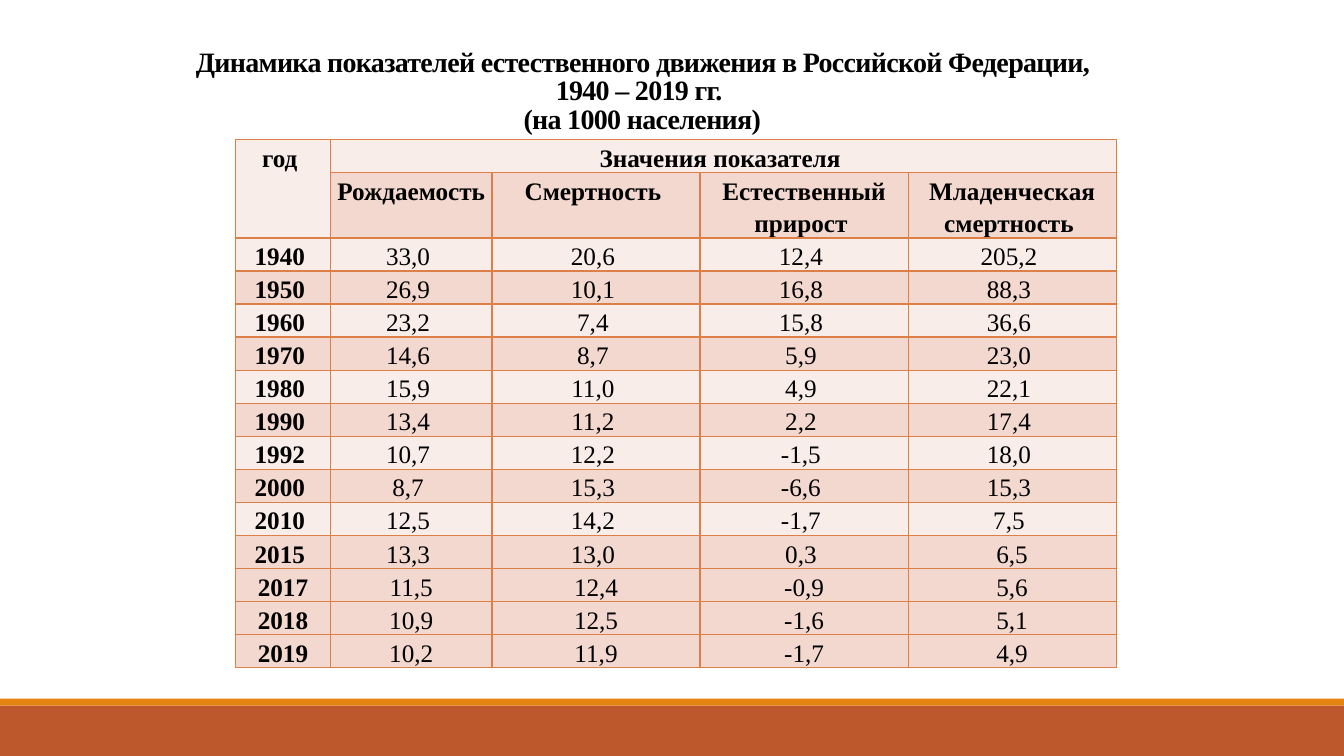
from lxml.etree import SubElement
from pptx import Presentation
from pptx.dml.color import RGBColor
from pptx.enum.shapes import MSO_SHAPE as Shape
from pptx.enum.text import MSO_ANCHOR as Anchor, MSO_AUTO_SIZE as AutoSize, PP_ALIGN as Align
from pptx.oxml.ns import qn
from pptx.util import Pt

COLORS = {
    "text": "000000",
    "footer": "BD582C",
    "stripe": "E48312",
    "border": "DD8047",
    "light": "F9EDE9",
    "dark": "F2D8CF",
}
TITLE = (
    "Динамика показателей естественного движения в Российской Федерации, "
    "1940 – 2019 гг. \v(на 1000 населения)"
)
ROWS = [
    "год |Значения показателя |||",
    "|Рождаемость |Смертность |Естественный прирост |Младенческая смертность ",
    "1940 |33,0 |20,6 |12,4 |205,2 ",
    "1950 |26,9 |10,1 |16,8 |88,3 ",
    "1960 |23,2 |7,4 |15,8 |36,6 ",
    "1970 |14,6 |8,7 |5,9 |23,0 ",
    "1980 |15,9 |11,0 |4,9 |22,1 ",
    "1990 |13,4 |11,2 |2,2 |17,4 ",
    "1992 |10,7 |12,2 |-1,5 |18,0 ",
    "2000 |8,7 |15,3 |-6,6 |15,3 ",
    "2010 |12,5 |14,2 |-1,7 |7,5 ",
    "2015 |13,3 |13,0 |0,3 |6,5",
    "2017|11,5|12,4|-0,9|5,6",
    "2018|10,9|12,5|-1,6|5,1",
    "2019|10,2|11,9|-1,7|4,9",
]
HEADER_ROWS = 2
RECENT_ROW = 12
COLUMN_WIDTHS = [67.8, 115.5, 148.6, 148.6, 148.6]
ROW_HEIGHTS = [16.5, 29] + [21] * (len(ROWS) - HEADER_ROWS)


class SlideBuilder:
    font = "Times New Roman"

    def __init__(self, page):
        self.page = page

    def color(self, name):
        return RGBColor.from_string(COLORS[name])

    def format_para(self, para, size, bold, spacing):
        para.alignment = Align.CENTER
        para.line_spacing = spacing
        for span in para.runs:
            span.font.name = self.font
            span.font.size = Pt(size)
            span.font.bold = bold
            span.font.color.rgb = self.color("text")

    def bar(self, top, height, fill):
        box = self.page.shapes.add_shape(Shape.RECTANGLE, 0, Pt(top), Pt(960), Pt(height))
        box.shadow.inherit = False
        box.fill.solid()
        box.fill.fore_color.rgb = self.color(fill)
        box.line.fill.background()

    def title(self, text, left, top, width, height):
        box = self.page.shapes.title
        box.left, box.top, box.width, box.height = Pt(left), Pt(top), Pt(width), Pt(height)
        frame = box.text_frame
        frame.word_wrap = True
        frame.auto_size = AutoSize.NONE
        frame.vertical_anchor = Anchor.BOTTOM
        para = frame.paragraphs[0]
        para.text = text
        self.format_para(para, 20, True, 0.85)
        for span in para.runs:
            span.font._element.set("spc", "-50")

    def border(self, cell):
        properties = cell._tc.get_or_add_tcPr()
        for side in ("a:lnL", "a:lnR", "a:lnT", "a:lnB"):
            line = SubElement(properties, qn(side), w=str(Pt(1)))
            fill = SubElement(line, qn("a:solidFill"))
            SubElement(fill, qn("a:srgbClr"), val=COLORS["border"])

    def cell(self, cell, text, bold, fill):
        self.border(cell)
        cell.fill.solid()
        cell.fill.fore_color.rgb = self.color(fill)
        cell.margin_left = cell.margin_right = Pt(3.6)
        cell.margin_top, cell.margin_bottom = Pt(0.7), 0
        para = cell.text_frame.paragraphs[0]
        para.text = text
        self.format_para(para, 18, bold, 1.15)

    def table(self, left, top, width, height):
        frame = self.page.shapes.add_table(
            len(ROWS), len(COLUMN_WIDTHS), Pt(left), Pt(top), Pt(width), Pt(height)
        )
        table = frame.table
        table.first_row = table.horz_banding = False
        for column, column_width in zip(table.columns, COLUMN_WIDTHS):
            column.width = Pt(column_width)
        for row, row_height in zip(table.rows, ROW_HEIGHTS):
            row.height = Pt(row_height)
        frame.height = Pt(height)
        for r, line in enumerate(ROWS):
            fill = "light" if r % 2 == 0 and r < RECENT_ROW else "dark"
            for c, text in enumerate(line.split("|")):
                cell = table.cell(r, c)
                self.cell(cell, text, r < HEADER_ROWS or c == 0, fill)
                if r >= RECENT_ROW and 1 <= c <= 3:
                    cell.vertical_anchor = Anchor.BOTTOM
                    cell.text_frame.paragraphs[0].space_after = Pt(10)
        table.cell(0, 0).merge(table.cell(1, 0))
        table.cell(0, 1).merge(table.cell(0, 4))


def main():
    deck = Presentation()
    deck.slide_width, deck.slide_height = Pt(960), Pt(540)
    builder = SlideBuilder(deck.slides.add_slide(deck.slide_layouts[5]))
    builder.bar(504, 36, "footer")
    builder.bar(499, 5, "stripe")
    builder.title(TITLE, 120, -11.5, 677.5, 111.6)
    builder.table(168.2, 99.8, 629.1, 405.4)
    deck.save("out.pptx")


if __name__ == "__main__":
    main()
